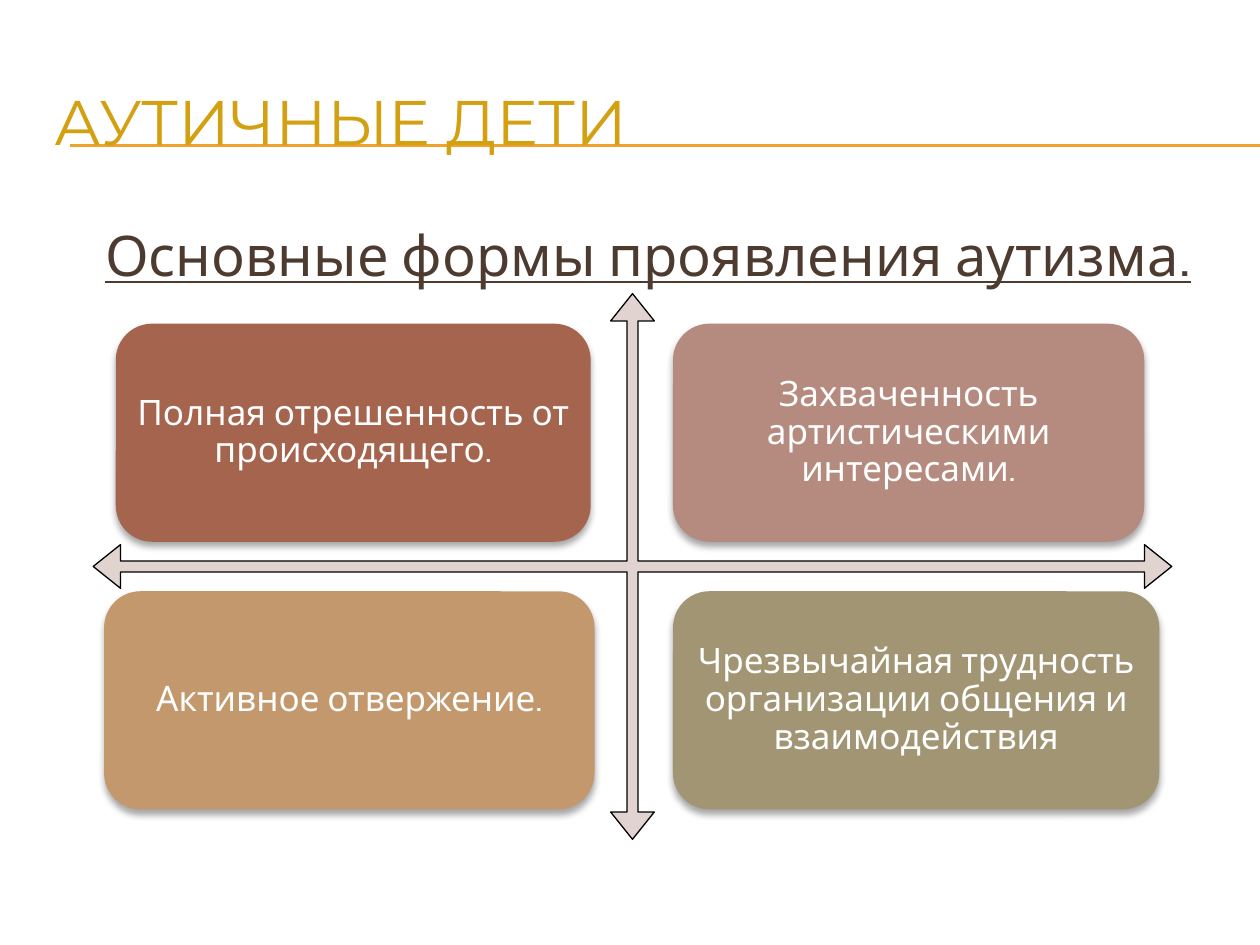
from lxml.etree import SubElement
from pptx import Presentation
from pptx.dml.color import RGBColor
from pptx.enum.shapes import MSO_CONNECTOR as Connector, MSO_SHAPE as Shape
from pptx.enum.text import MSO_ANCHOR as Anchor, PP_ALIGN as Align
from pptx.oxml.ns import qn
from pptx.util import Pt

GOLD = RGBColor(0xD2, 0xA0, 0x10)
AMBER = RGBColor(0xF0, 0xA2, 0x2E)
BROWN = RGBColor(0x4E, 0x3B, 0x30)
BLACK = RGBColor(0x00, 0x00, 0x00)
WHITE = RGBColor(0xFF, 0xFF, 0xFF)
PALE_ROSE = RGBColor(0xE1, 0xD3, 0xD0)
RUST = RGBColor(0xA5, 0x64, 0x4E)
ROSE = RGBColor(0xB5, 0x8B, 0x80)
SAND = RGBColor(0xC3, 0x98, 0x6D)
OLIVE = RGBColor(0xA1, 0x95, 0x74)

TITLE = {"name": "Montserrat", "size": Pt(36)}
HEADING = {"name": "Cabin", "size": Pt(32), "underline": True}
CARD = {"name": "Cabin", "size": Pt(20)}

CARD_HEIGHT = 124.6
TOP_ROW, BOTTOM_ROW = 185, 337.9
RIGHT_COLUMN = 384.6
CARDS = [
    (66.2, TOP_ROW, 271.4, RUST, "Полная отрешенность от происходящего."),
    (RIGHT_COLUMN, TOP_ROW, 269.3, ROSE, "Захваченность артистическими интересами."),
    (59.5, BOTTOM_ROW, 280.3, SAND, "Активное отвержение."),
    (RIGHT_COLUMN, BOTTOM_ROW, 277.9, OLIVE,
     "Чрезвычайная трудность организации общения и взаимодействия"),
]


def set_all(target, values):
    """Set each attribute of target from a dict of values."""
    for name, value in values.items():
        setattr(target, name, value)


def write(shape, text, font, color, frame_format, para_format):
    """Write one formatted paragraph into a shape."""
    frame = shape.text_frame
    set_all(frame, {"word_wrap": True, **frame_format})
    para = frame.paragraphs[0]
    set_all(para, para_format)
    span = para.add_run()
    span.text = text
    set_all(span.font, font)
    span.font.color.rgb = color


def add_text(page, bounds, text, font, color, anchor, align):
    """Add a text box with one paragraph."""
    box = page.shapes.add_textbox(*map(Pt, bounds))
    write(box, text, font, color, {"vertical_anchor": anchor}, {"alignment": align})
    return box


def add_rule(page, y):
    """Add a thin title rule that runs to the right edge."""
    rule = page.shapes.add_connector(Connector.STRAIGHT, Pt(40.3), Pt(y), Pt(720), Pt(y))
    rule.line.color.rgb = AMBER
    rule.line.width = Pt(0.75)
    SubElement(rule._element.spPr, qn("a:effectLst"))


def add_filled(page, kind, bounds, fill):
    """Add a preset shape with a solid fill and no shadow."""
    shape = page.shapes.add_shape(kind, *map(Pt, bounds))
    shape.shadow.inherit = False
    shape.fill.solid()
    shape.fill.fore_color.rgb = fill
    return shape


def add_axes(page):
    """Add the four-way arrow that parts the cards."""
    axes = add_filled(page, Shape.QUAD_ARROW, (53.3, 167.8, 616.3, 311.8), PALE_ROSE)
    axes.line.color.rgb = BLACK
    axes.line.width = Pt(0.75)
    for index, value in enumerate((0.02, 0.04, 0.05)):
        axes.adjustments[index] = value


def add_shadow(shape):
    """Give a shape a soft shadow below it."""
    effects = shape._element.spPr.find(qn("a:effectLst"))
    shadow = SubElement(effects, qn("a:outerShdw"), blurRad=str(Pt(4)),
                        dist=str(Pt(3)), dir="5400000", rotWithShape="0")
    color = SubElement(shadow, qn("a:srgbClr"), val=str(BLACK))
    SubElement(color, qn("a:alpha"), val="35000")


def add_card(page, left, top, width, fill, text):
    """Add a rounded card with centred white text."""
    card = add_filled(page, Shape.ROUNDED_RECTANGLE, (left, top, width, CARD_HEIGHT), fill)
    card.line.fill.background()
    add_shadow(card)
    margins = {f"margin_{side}": Pt(6) for side in ("left", "top", "right", "bottom")}
    write(card, text, CARD, WHITE, {"vertical_anchor": Anchor.MIDDLE, **margins},
          {"alignment": Align.CENTER, "line_spacing": 0.9, "space_after": Pt(7)})


def main():
    """Build the slide and save it."""
    deck = Presentation()
    deck.slide_width, deck.slide_height = Pt(720), Pt(540)
    page = deck.slides.add_slide(deck.slide_layouts[6])
    for y in (82.8, 83.5):
        add_rule(page, y)
    add_text(page, (24, 36, 684, 66), "АУТИЧНЫЕ ДЕТИ", TITLE, GOLD,
             Anchor.MIDDLE, Align.LEFT)
    heading = add_text(page, (24, 122.4, 684, 356.4), "Основные формы проявления аутизма.",
                       HEADING, BROWN, Anchor.TOP, Align.CENTER)
    heading.text_frame.margin_left = Pt(15.8)
    add_axes(page)
    for card in CARDS:
        add_card(page, *card)
    deck.save("out.pptx")


if __name__ == "__main__":
    main()
